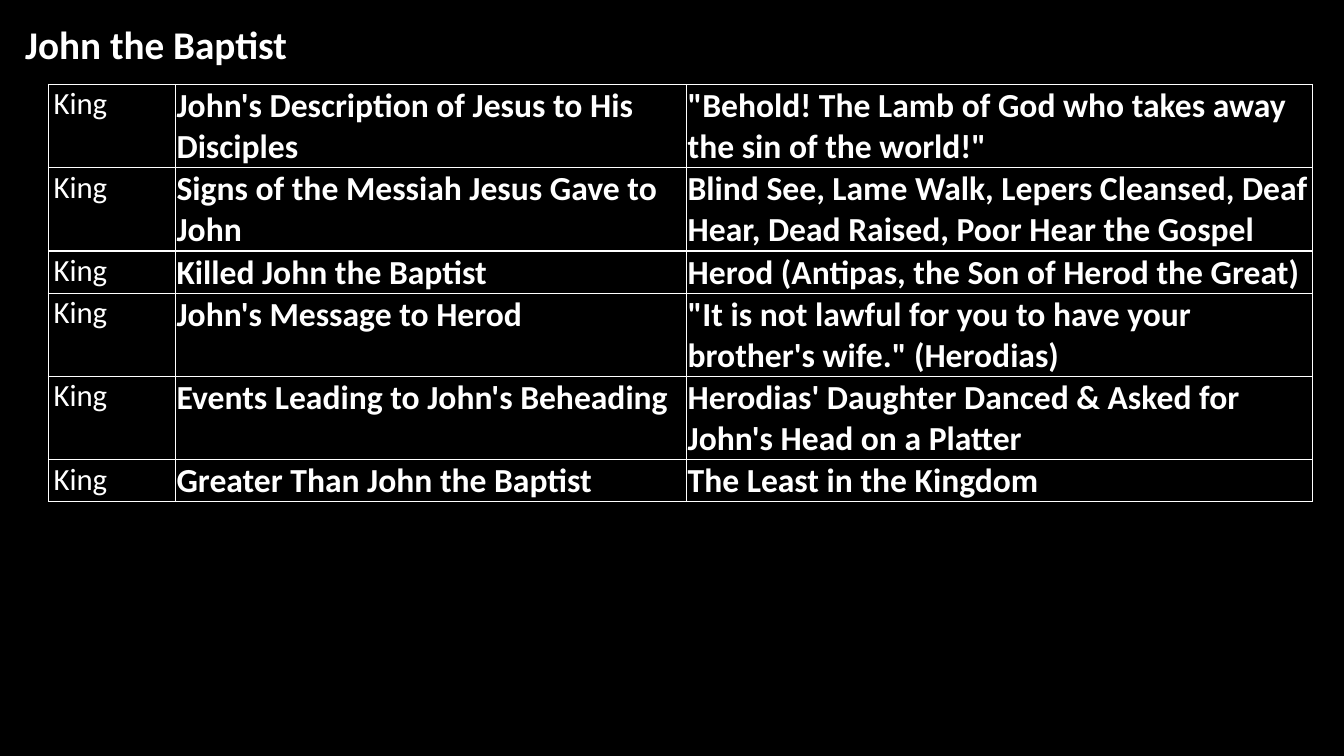
import pptx
import pptx.dml.color
import pptx.enum.text
import pptx.oxml
import pptx.oxml.ns
import pptx.util

Cm = pptx.util.Cm
Pt = pptx.util.Pt

TITLE = "John the Baptist"
SPEAKER = "King"
FACTS = [
    ("John's Description of Jesus to His Disciples",
     "\"Behold! The Lamb of God who takes away the sin of the world!\""),
    ("Signs of the Messiah Jesus Gave to John",
     "Blind See, Lame Walk, Lepers Cleansed, Deaf Hear, Dead Raised, Poor Hear the Gospel"),
    ("Killed John the Baptist",
     "Herod (Antipas, the Son of Herod the Great)"),
    ("John's Message to Herod",
     "\"It is not lawful for you to have your brother's wife.\" (Herodias)"),
    ("Events Leading to John's Beheading",
     "Herodias' Daughter Danced & Asked for John's Head on a Platter"),
    ("Greater Than John the Baptist",
     "The Least in the Kingdom"),
]

# width in cm, left margin in cm, text size in points, bold
COLUMNS = [(3.2, 0.13, 22, False), (12.88, 0.03, 24, True), (15.77, 0.03, 24, True)]
ROW_HEIGHT = 1.03

FONT = "Calibri"
BLACK = pptx.dml.color.RGBColor(0, 0, 0)
WHITE = pptx.dml.color.RGBColor(255, 255, 255)


def write(para, text, size, bold):
    span = para.add_run()
    span.text = text
    span.font.name = FONT
    span.font.size = Pt(size)
    span.font.bold = bold
    span.font.color.rgb = WHITE


def add_borders(cell):
    properties = cell._tc.get_or_add_tcPr()
    for position, side in enumerate(("lnL", "lnR", "lnT", "lnB")):
        border = pptx.oxml.parse_xml(
            f'<a:{side} {pptx.oxml.ns.nsdecls("a")} w="{Pt(1)}">'
            f'<a:solidFill><a:srgbClr val="{WHITE}"/></a:solidFill></a:{side}>')
        properties.insert(position, border)


def add_title(page):
    title = page.shapes.title
    title.left, title.top = Cm(0.38), Cm(0.38)
    title.width, title.height = Cm(29.62), Cm(1.45)
    frame = title.text_frame
    frame.vertical_anchor = pptx.enum.text.MSO_ANCHOR.TOP
    frame.auto_size = pptx.enum.text.MSO_AUTO_SIZE.NONE
    para = frame.paragraphs[0]
    para.alignment = pptx.enum.text.PP_ALIGN.LEFT
    write(para, TITLE, 28, True)


def add_facts(page):
    total_width = sum(column[0] for column in COLUMNS)
    table = page.shapes.add_table(
        len(FACTS), len(COLUMNS), Cm(1.22), Cm(2.13),
        Cm(total_width), Cm(ROW_HEIGHT * len(FACTS))).table
    table.first_row = False
    table.horz_banding = False
    for column, (width, *_) in zip(table.columns, COLUMNS):
        column.width = Cm(width)
    for row, fact in zip(table.rows, FACTS):
        row.height = Cm(ROW_HEIGHT)
        for cell, text, (_, left, size, bold) in zip(row.cells, (SPEAKER, *fact), COLUMNS):
            cell.margin_left = Cm(left)
            cell.margin_right = cell.margin_top = Cm(0.03)
            cell.margin_bottom = 0
            cell.fill.background()
            add_borders(cell)
            write(cell.text_frame.paragraphs[0], text, size, bold)


def main():
    deck = pptx.Presentation()
    deck.slide_width, deck.slide_height = Cm(33.87), Cm(19.05)
    page = deck.slides.add_slide(deck.slide_layouts[5])
    page.background.fill.solid()
    page.background.fill.fore_color.rgb = BLACK
    add_title(page)
    add_facts(page)
    deck.save("out.pptx")


if __name__ == "__main__":
    main()
